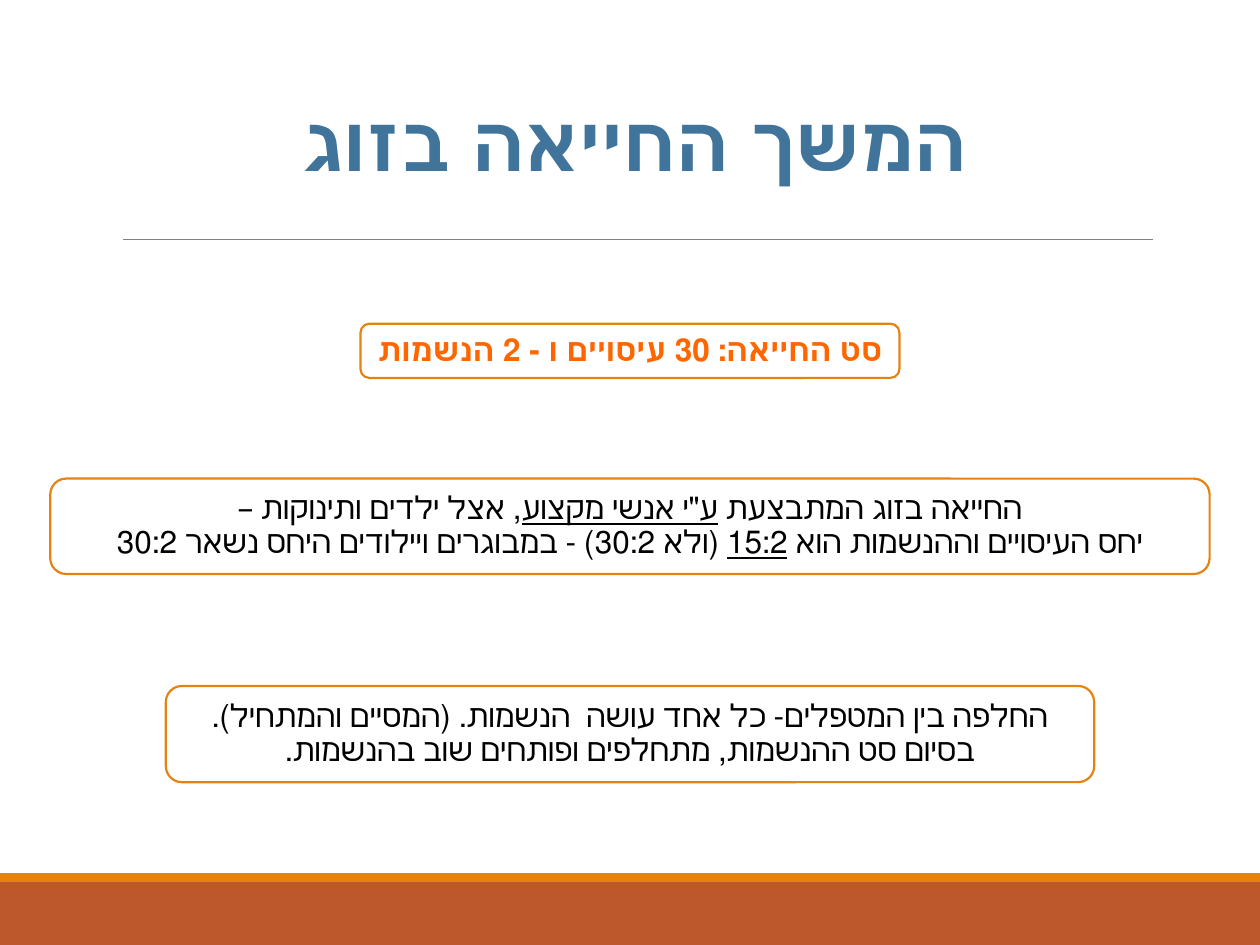
import pptx
import pptx.util
import pptx.dml.color
import pptx.enum.shapes
import pptx.enum.text
import pptx.oxml

Pt = pptx.util.Pt
RGBColor = pptx.dml.color.RGBColor
SHAPES = pptx.enum.shapes.MSO_SHAPE
CENTER = pptx.enum.text.PP_ALIGN.CENTER
MIDDLE = pptx.enum.text.MSO_ANCHOR.MIDDLE

RUST = RGBColor(0xBD, 0x58, 0x2C)
AMBER = RGBColor(0xE4, 0x83, 0x12)
GRAY = RGBColor(0x80, 0x80, 0x80)
WHITE = RGBColor(0xFF, 0xFF, 0xFF)
BLACK = RGBColor(0, 0, 0)
ORANGE = RGBColor(0xFF, 0x66, 0x00)
BLUE = RGBColor(0x40, 0x74, 0x9B)

PAGE_WIDTH, PAGE_HEIGHT = 720, 540


def add_block(kind, left, top, width, height, color):
    shape = page.shapes.add_shape(kind, Pt(left), Pt(top), Pt(width), Pt(height))
    shape.shadow.inherit = False
    shape.fill.solid()
    shape.fill.fore_color.rgb = color
    shape.line.fill.background()
    return shape


def add_span(para, text, color, **formats):
    span = para.add_run()
    span.text = text
    span.font.color.rgb = color
    for name, value in {"name": "Calibri", **formats}.items():
        setattr(span.font, name, value)


deck = pptx.Presentation()
deck.slide_width, deck.slide_height = Pt(PAGE_WIDTH), Pt(PAGE_HEIGHT)
page = deck.slides.add_slide(deck.slide_layouts[5])

# Footer bands and the rule under the title
add_block(SHAPES.RECTANGLE, 0, 504, PAGE_WIDTH, 36, RUST)
add_block(SHAPES.RECTANGLE, 0, 499, PAGE_WIDTH, 5, AMBER)
rule = page.shapes.add_connector(
    pptx.enum.shapes.MSO_CONNECTOR.STRAIGHT, Pt(70.5), Pt(136.8), Pt(658.8), Pt(136.8))
rule.line.color.rgb = GRAY
rule.line.width = Pt(0.5)
rule.element.spPr.append(pptx.oxml.parse_xml(
    '<a:effectLst xmlns:a="http://schemas.openxmlformats.org/drawingml/2006/main"/>'))

# Title
title = page.shapes.title
title.left, title.top, title.width, title.height = Pt(82), Pt(41), Pt(561), Pt(79)
title.text_frame.vertical_anchor = MIDDLE
para = title.text_frame.paragraphs[0]
para.alignment = CENTER
add_span(para, "המשך החייאה בזוג", BLUE, size=Pt(44), bold=True)

# Centred cards: top, width, height, color, bold, lines of (text, underlined)
cards = [
    (185, 308, 31, ORANGE, True, [
        [("סט החייאה: 30 עיסויים ו - 2 הנשמות", False)],
    ]),
    (273.5, 662.5, 54.5, BLACK, False, [
        [("החייאה בזוג המתבצעת ", False), ("ע\"י אנשי מקצוע", True),
         (", אצל ילדים ותינוקות –", False)],
        [("יחס העיסויים וההנשמות הוא ", False), ("15:2", True),
         (" (ולא 30:2) - במבוגרים ויילודים היחס נשאר 30:2", False)],
    ]),
    (392, 530.5, 55, BLACK, False, [
        [("החלפה בין המטפלים- כל אחד עושה  הנשמות. (המסיים והמתחיל).", False)],
        [("בסיום סט ההנשמות, מתחלפים ופותחים שוב בהנשמות.", False)],
    ]),
]
for top, width, height, color, bold, lines in cards:
    card = add_block(SHAPES.ROUNDED_RECTANGLE, (PAGE_WIDTH - width) / 2, top,
                     width, height, WHITE)
    card.line.color.rgb = AMBER
    card.line.width = Pt(1.25)
    box = card.text_frame
    box.word_wrap = True
    box.vertical_anchor = MIDDLE
    for side in ("left", "top", "right", "bottom"):
        setattr(box, f"margin_{side}", Pt(5))
    para = box.paragraphs[0]
    para.alignment = CENTER
    para.line_spacing = 0.9
    para._p.get_or_add_pPr().set("rtl", "1")
    for index, line in enumerate(lines):
        if index:
            para.add_line_break()
        for text, underlined in line:
            add_span(para, text, color, size=Pt(18), bold=bold, underline=underlined)

deck.save("out.pptx")
